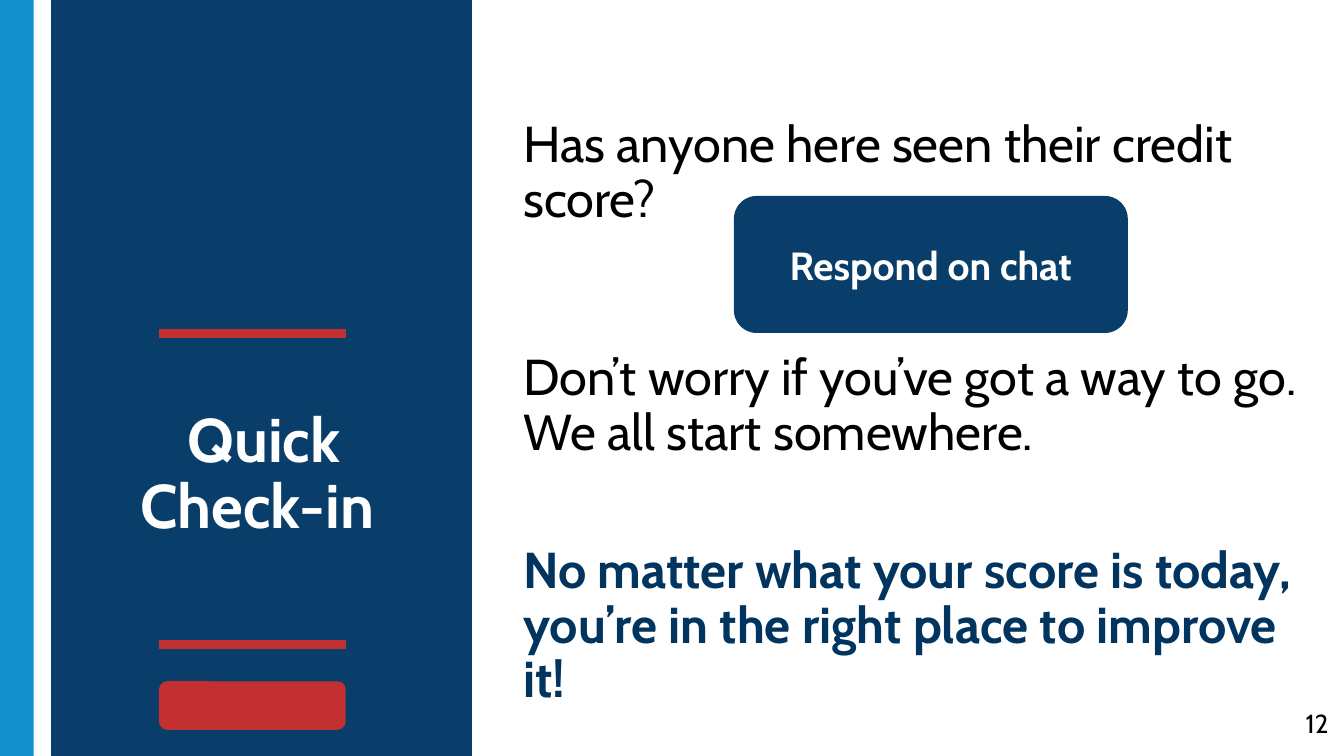
from lxml.etree import SubElement
from pptx import Presentation
from pptx.dml.color import RGBColor
from pptx.enum.shapes import MSO_CONNECTOR, MSO_SHAPE
from pptx.enum.text import MSO_ANCHOR, MSO_AUTO_SIZE, PP_ALIGN
from pptx.oxml.ns import qn
from pptx.util import Pt

FONT = "Cabin"
NAVY, BLUE, RED, WHITE, BLACK = "083E69", "1290CE", "C33032", "FFFFFF", "000000"
SLIDE_SIZE = (720, 405)
TITLE = "Quick Check-in "
CHAT_PROMPT = "Respond on chat"
PAGE_NUMBER = "12"
MESSAGES = [
    ("Has anyone here seen their credit score?", 0, BLACK, False),
    ("Don’t worry if you’ve got a way to go. We all start somewhere.", 66.5, BLACK, False),
    ("No matter what your score is today, you’re in the right place to improve it!",
     45, "01345E", True),
]
PANELS = [
    (MSO_SHAPE.RECTANGLE, (0, 0, 18, 405), BLUE),
    (MSO_SHAPE.RECTANGLE, (27.4, 0, 225.4, 405), NAVY),
    (MSO_SHAPE.ROUNDED_RECTANGLE, (85.2, 365, 100, 26), RED),
]
RULE_LEFT, RULE_RIGHT, RULE_TOPS = 85.2, 185.2, (178.6, 345.4)


def color(value):
    return RGBColor.from_string(value)


def add_panel(slide, kind, box, fill):
    shape = slide.shapes.add_shape(kind, *map(Pt, box))
    shape.shadow.inherit = False
    shape.fill.solid()
    shape.fill.fore_color.rgb = color(fill)
    shape.line.fill.background()
    return shape


def add_rule(slide, top):
    rule = slide.shapes.add_connector(
        MSO_CONNECTOR.STRAIGHT, Pt(RULE_LEFT), Pt(top), Pt(RULE_RIGHT), Pt(top))
    rule.line.color.rgb = color(RED)
    rule.line.width = Pt(4.5)
    SubElement(rule.element.spPr, qn("a:effectLst"))


def set_frame(frame, anchor, margins):
    frame.word_wrap = True
    frame.auto_size = MSO_AUTO_SIZE.NONE
    frame.vertical_anchor = anchor
    frame.margin_left = frame.margin_right = Pt(margins[0])
    frame.margin_top = frame.margin_bottom = Pt(margins[1])


def write(paragraph, text, size, ink, bold=False, align=PP_ALIGN.LEFT, spacing=1.0, before=0):
    paragraph.text = text
    paragraph.alignment = align
    paragraph.line_spacing = spacing
    paragraph.space_before = Pt(before)
    for run in paragraph.runs:
        run.font.name = FONT
        run.font.size = Pt(size)
        run.font.bold = bold
        run.font.color.rgb = color(ink)


def main():
    """Build the quick check-in slide."""
    presentation = Presentation()
    presentation.slide_width, presentation.slide_height = map(Pt, SLIDE_SIZE)
    slide = presentation.slides.add_slide(presentation.slide_layouts[5])

    for panel in PANELS:
        add_panel(slide, *panel)
    for top in RULE_TOPS:
        add_rule(slide, top)

    title = slide.shapes.title
    title.left, title.top, title.width, title.height = map(Pt, (56.9, 192.2, 169.2, 125.3))
    set_frame(title.text_frame, MSO_ANCHOR.MIDDLE, (5, 2.7))
    write(title.text_frame.paragraphs[0], TITLE, 33, WHITE, True, PP_ALIGN.CENTER, 0.9)
    title.element.getparent().append(title.element)

    frame = slide.shapes.add_textbox(*map(Pt, (275, 42.5, 432, 340))).text_frame
    set_frame(frame, MSO_ANCHOR.BOTTOM, (5.3, 2.7))
    for index, (text, before, ink, bold) in enumerate(MESSAGES):
        paragraph = frame.add_paragraph() if index else frame.paragraphs[0]
        write(paragraph, text, 27, ink, bold, spacing=0.9, before=before)

    button = add_panel(slide, MSO_SHAPE.ROUNDED_RECTANGLE, (393.2, 105, 211, 73.4), NAVY)
    set_frame(button.text_frame, MSO_ANCHOR.MIDDLE, (7.2, 3.6))
    write(button.text_frame.paragraphs[0], CHAT_PROMPT, 21, WHITE, True, PP_ALIGN.CENTER)

    number = slide.shapes.add_textbox(*map(Pt, (673.9, 373.9, 43.2, 31))).text_frame
    set_frame(number, MSO_ANCHOR.TOP, (5.3, 5.3))
    write(number.paragraphs[0], PAGE_NUMBER, 14, BLACK, align=PP_ALIGN.RIGHT)

    presentation.save("out.pptx")


if __name__ == "__main__":
    main()
